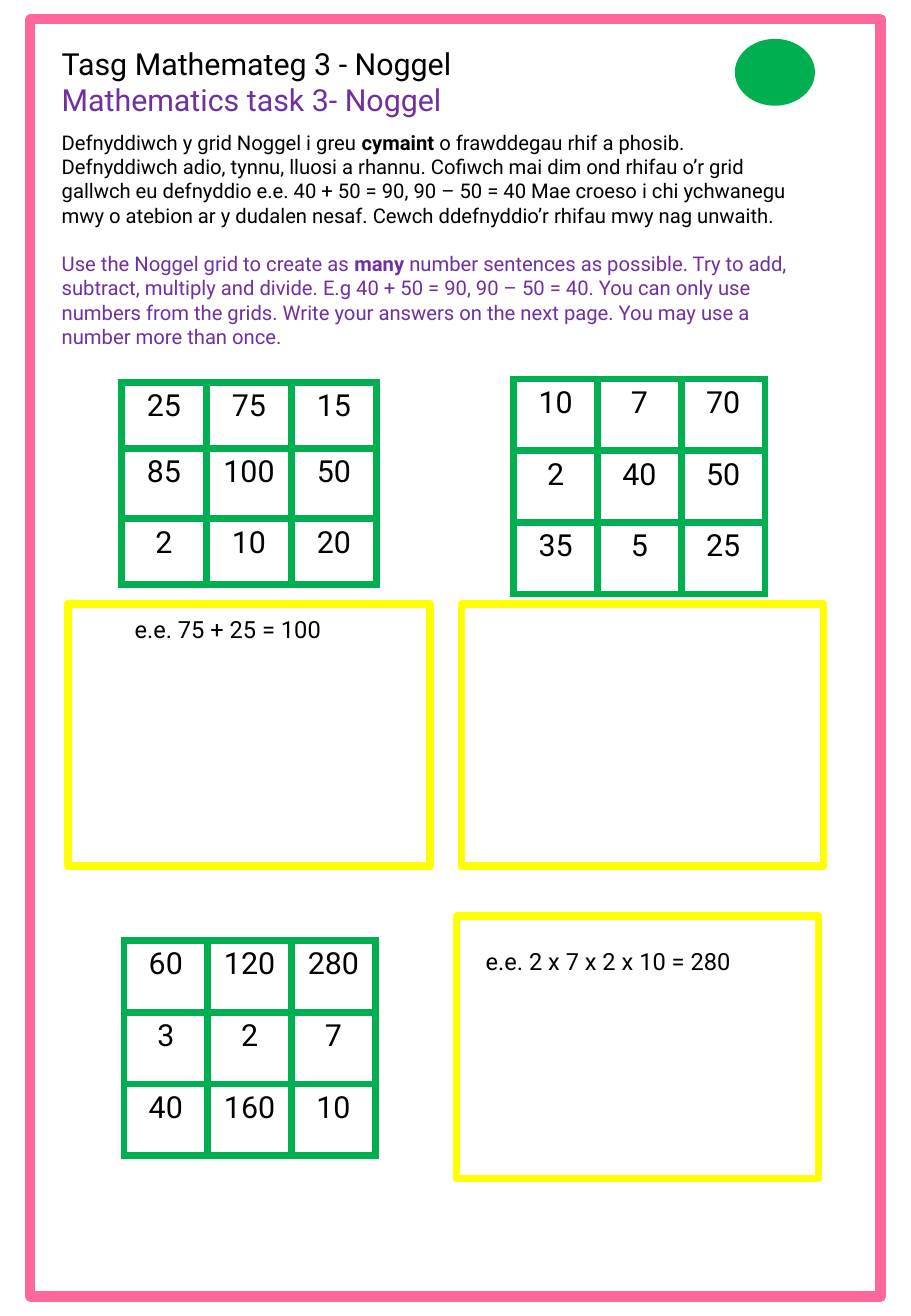
import lxml.etree
import pptx
import pptx.dml.color
import pptx.enum.shapes
import pptx.enum.text
import pptx.oxml.ns
import pptx.util

Inches = pptx.util.Inches
Pt = pptx.util.Pt
SHAPES = pptx.enum.shapes.MSO_SHAPE

THEME = {
    "font": "Roboto",
    "black": "000000", "purple": "7030A0", "pink": "FF6699",
    "green": "00B050", "yellow": "FFFF00",
    "title": 18, "body": 12, "number": 18, "example": 14,
    "frame_line": 6, "box_line": 4.5, "grid_line": 4.5,
    "paragraph_gap": 14.4,
}

# A paragraph is a colour name and its runs; a run is its text and whether it is bold.
TITLE = [
    ("black", [("Tasg Mathemateg 3 - Noggel", False)]),
    ("purple", [("Mathematics task 3- Noggel", False)]),
]
INSTRUCTIONS = [
    ("black", [
        ("Defnyddiwch y grid Noggel i greu ", False),
        ("cymaint ", True),
        ("o frawddegau rhif a phosib. Defnyddiwch adio, tynnu, lluosi a rhannu. "
         "Cofiwch mai dim ond rhifau o’r grid gallwch eu defnyddio "
         "e.e. 40 + 50 = 90, 90 – 50 = 40 Mae croeso i chi ychwanegu mwy o atebion "
         "ar y dudalen nesaf. Cewch ddefnyddio’r rhifau mwy nag unwaith.", False),
    ]),
    ("purple", [
        ("Use the Noggel grid to create as ", False),
        ("many ", True),
        ("number sentences as possible. Try to add, subtract, multiply and divide. "
         "E.g 40 + 50 = 90, 90 – 50 = 40. You can only use numbers from the grids. "
         "Write your answers on the next page. You may use a number more than once.", False),
    ]),
]
# left, top, column width, row heights, numbers
GRIDS = [
    (1, 3.15, 0.7, (0.54, 0.58, 0.54), [(25, 75, 15), (85, 100, 50), (2, 10, 20)]),
    (4.23, 3.12, 0.69, (0.59,) * 3, [(10, 7, 70), (2, 40, 50), (35, 5, 25)]),
    (1.02, 7.74, 0.69, (0.59,) * 3, [(60, 120, 280), (3, 2, 7), (40, 160, 10)]),
]
ANSWER_SIZE = (2.98, 2.16)
ANSWER_CORNERS = [(0.56, 4.97), (3.8, 4.97), (3.76, 7.54)]
EXAMPLES = [
    ((1.01, 5.01, 2.14, 0.34), "e.e. 75 + 25 = 100"),
    ((3.9, 7.74, 2.88, 0.34), "e.e. 2 x 7 x 2 x 10 = 280"),
]


def colour(name):
    return pptx.dml.color.RGBColor.from_string(THEME[name])


def add_run(para, text, size, colour_name="black", bold=False):
    span = para.add_run()
    span.text = text
    span.font.name = THEME["font"]
    span.font.size = Pt(THEME[size])
    span.font.color.rgb = colour(colour_name)
    span.font.bold = bold


def add_text(page, place, paragraphs, size, gap=0):
    frame = page.shapes.add_textbox(*map(Inches, place)).text_frame
    frame.word_wrap = True
    for index, (colour_name, runs) in enumerate(paragraphs):
        para = frame.add_paragraph() if index else frame.paragraphs[0]
        if index:
            para.space_before = Pt(gap)
        for text, bold in runs:
            add_run(para, text, size, colour_name, bold)


def add_outline(page, place, colour_name, width):
    box = page.shapes.add_shape(SHAPES.RECTANGLE, *map(Inches, place))
    box.shadow.inherit = False
    box.fill.background()
    box.line.color.rgb = colour(colour_name)
    box.line.width = Pt(THEME[width])


def add_borders(cell):
    properties = cell._tc.get_or_add_tcPr()
    qn = pptx.oxml.ns.qn
    for side in ("lnL", "lnR", "lnT", "lnB"):
        line = lxml.etree.SubElement(properties, qn(f"a:{side}"),
                                     w=str(Pt(THEME["grid_line"])))
        fill = lxml.etree.SubElement(line, qn("a:solidFill"))
        lxml.etree.SubElement(fill, qn("a:srgbClr"), val=THEME["green"])


def add_grid(page, left, top, column_width, row_heights, numbers):
    columns = len(numbers[0])
    place = (left, top, column_width * columns, sum(row_heights))
    table = page.shapes.add_table(len(numbers), columns, *map(Inches, place)).table
    table.first_row = table.horz_banding = False
    for column in table.columns:
        column.width = Inches(column_width)
    for row, height, values in zip(table.rows, row_heights, numbers):
        row.height = Inches(height)
        for cell, value in zip(row.cells, values):
            add_borders(cell)
            cell.fill.background()
            para = cell.text_frame.paragraphs[0]
            para.alignment = pptx.enum.text.PP_ALIGN.CENTER
            add_run(para, str(value), "number")


def main():
    deck = pptx.Presentation()
    deck.slide_width, deck.slide_height = Inches(7.5), Inches(10.83)
    page = deck.slides.add_slide(deck.slide_layouts[6])

    add_text(page, (0.41, 0.32, 4.23, 0.71), TITLE, "title")
    add_outline(page, (0.25, 0.16, 7, 10.51), "pink", "frame_line")
    add_text(page, (0.41, 1.02, 6.3, 3.13), INSTRUCTIONS, "body", THEME["paragraph_gap"])
    for grid in GRIDS:
        add_grid(page, *grid)
    for corner in ANSWER_CORNERS:
        add_outline(page, corner + ANSWER_SIZE, "yellow", "box_line")
    for place, example in EXAMPLES:
        add_text(page, place, [("black", [(example, False)])], "example")

    badge = page.shapes.add_shape(SHAPES.OVAL, *map(Inches, (6.05, 0.32, 0.66, 0.55)))
    badge.shadow.inherit = False
    badge.fill.solid()
    badge.fill.fore_color.rgb = colour("green")
    badge.line.fill.background()

    deck.save("out.pptx")


if __name__ == "__main__":
    main()
